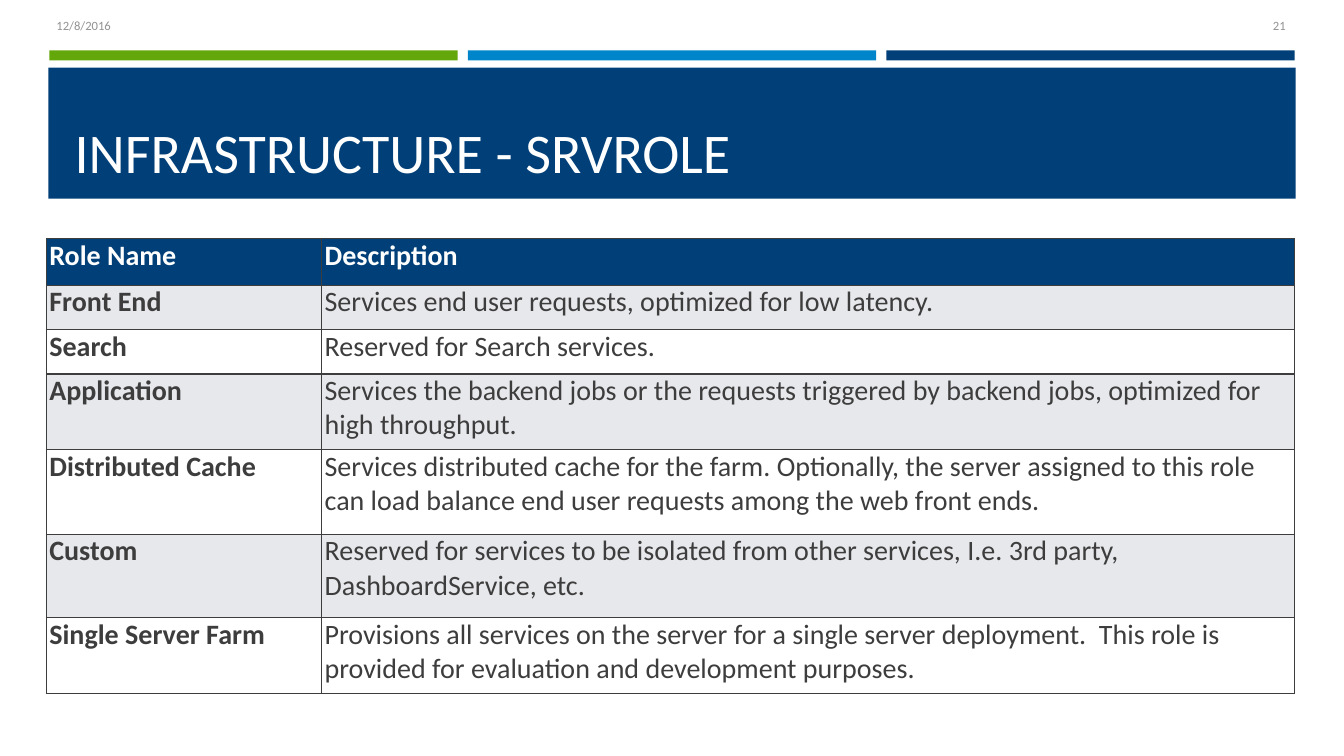
from dataclasses import dataclass

from lxml.etree import SubElement
from pptx import Presentation
from pptx.dml.color import RGBColor
from pptx.enum.shapes import MSO_SHAPE as Shape
from pptx.enum.text import MSO_ANCHOR as Anchor, MSO_AUTO_SIZE as AutoSize, PP_ALIGN as Align
from pptx.oxml.ns import qn
from pptx.util import Inches, Pt


@dataclass(frozen=True)
class Theme:
    font: str = "Calibri"
    navy: str = "003F77"
    blue: str = "0085CA"
    green: str = "63A70A"
    white: str = "FFFFFF"
    ink: str = "3D3D3D"
    stripe: str = "E7E8EC"
    muted: str = "929292"
    title_size: int = 40
    table_size: int = 20
    footer_size: int = 9
    border_width: int = 1


THEME = Theme()

ROLES = [
    ("Role Name", "Description"),
    ("Front End", "Services end user requests, optimized for low latency."),
    ("Search", "Reserved for Search services."),
    ("Application", "Services the backend jobs or the requests triggered by backend jobs, "
                    "optimized for high throughput."),
    ("Distributed Cache", "Services distributed cache for the farm. Optionally, the server assigned "
                          "to this role can load balance end user requests among the web front ends."),
    ("Custom", "Reserved for services to be isolated from other services, I.e. 3rd party, "
               "DashboardService, etc."),
    ("Single Server Farm", "Provisions all services on the server for a single server deployment.  "
                           "This role is provided for evaluation and development purposes."),
]
COLUMN_WIDTHS = [2.73, 9.65]
ROW_HEIGHTS = [0.46, 0.44, 0.44, 0.75, 0.84, 0.83, 0.75]


def apply_format(target, values):
    for name, value in values.items():
        setattr(target, name, value)


def write(frame, text, size, color, bold=False, align=Align.LEFT):
    para = frame.paragraphs[0]
    para.alignment = align
    span = para.add_run()
    span.text = text
    apply_format(span.font, {"name": THEME.font, "size": Pt(size), "bold": bold})
    span.font.color.rgb = RGBColor.from_string(color)
    return para


def add_bar(page, left, top, width, height, color):
    bar = page.shapes.add_shape(Shape.RECTANGLE, *map(Inches, (left, top, width, height)))
    bar.shadow.inherit = False
    bar.fill.solid()
    bar.fill.fore_color.rgb = RGBColor.from_string(color)
    bar.line.fill.background()


def add_footer_text(page, left, width, text, align, inset):
    box = page.shapes.add_textbox(*map(Inches, (left, 0.05, width, 0.4)))
    apply_format(box.text_frame, {
        "word_wrap": True, "vertical_anchor": Anchor.MIDDLE,
        "margin_left": Inches(inset), "margin_right": Inches(inset),
    })
    write(box.text_frame, text, THEME.footer_size, THEME.muted, align=align)


def place_title(page, text):
    title = page.shapes.title
    apply_format(title, {
        "left": Inches(0.64), "top": Inches(0.77),
        "width": Inches(12.06), "height": Inches(1.11),
    })
    apply_format(title.text_frame, {
        "vertical_anchor": Anchor.BOTTOM, "word_wrap": True, "auto_size": AutoSize.NONE,
    })
    write(title.text_frame, text, THEME.title_size, THEME.white)
    title.element.getparent().append(title.element)


def add_borders(cell):
    properties = cell._tc.get_or_add_tcPr()
    for side in ("a:lnL", "a:lnR", "a:lnT", "a:lnB"):
        line = SubElement(properties, qn(side), w=str(Pt(THEME.border_width)))
        fill = SubElement(line, qn("a:solidFill"))
        SubElement(fill, qn("a:srgbClr"), val=THEME.ink)


def fill_cell(cell, text, fill, color, bold):
    apply_format(cell, {
        "margin_left": Inches(0.03), "margin_right": Inches(0.03),
        "margin_top": 0, "margin_bottom": 0, "vertical_anchor": Anchor.TOP,
    })
    add_borders(cell)
    cell.fill.solid()
    cell.fill.fore_color.rgb = RGBColor.from_string(fill)
    para = write(cell.text_frame, text, THEME.table_size, color, bold)
    para.space_after = Pt(4.5)


def add_role_table(page):
    size = (sum(COLUMN_WIDTHS), sum(ROW_HEIGHTS))
    frame = page.shapes.add_table(len(ROLES), len(COLUMN_WIDTHS),
                                  *map(Inches, (0.46, 2.37, *size)))
    table = frame.table
    apply_format(table, {"first_row": True, "horz_banding": False})
    for column, width in zip(table.columns, COLUMN_WIDTHS):
        column.width = Inches(width)
    for index, (row, height, texts) in enumerate(zip(table.rows, ROW_HEIGHTS, ROLES)):
        row.height = Inches(height)
        header = index == 0
        band = THEME.stripe if index % 2 else THEME.white
        for position, (cell, text) in enumerate(zip(row.cells, texts)):
            fill_cell(cell, text, THEME.navy if header else band,
                      THEME.white if header else THEME.ink, header or position == 0)


def main():
    deck = Presentation()
    apply_format(deck, {"slide_width": Inches(13.33), "slide_height": Inches(7.5)})
    page = deck.slides.add_slide(deck.slide_layouts[5])
    for index, color in enumerate((THEME.green, THEME.blue, THEME.navy)):
        add_bar(page, 0.49 + index * 4.15, 0.5, 4.05, 0.1, color)
    add_bar(page, 0.48, 0.67, 12.37, 1.3, THEME.navy)
    place_title(page, "INFRASTRUCTURE - SRVROLE")
    add_footer_text(page, 0.49, 3, "12/8/2016", Align.LEFT, 0.07)
    add_footer_text(page, 12.14, 0.71, "21", Align.RIGHT, 0.1)
    add_role_table(page)
    deck.save("out.pptx")


if __name__ == "__main__":
    main()
